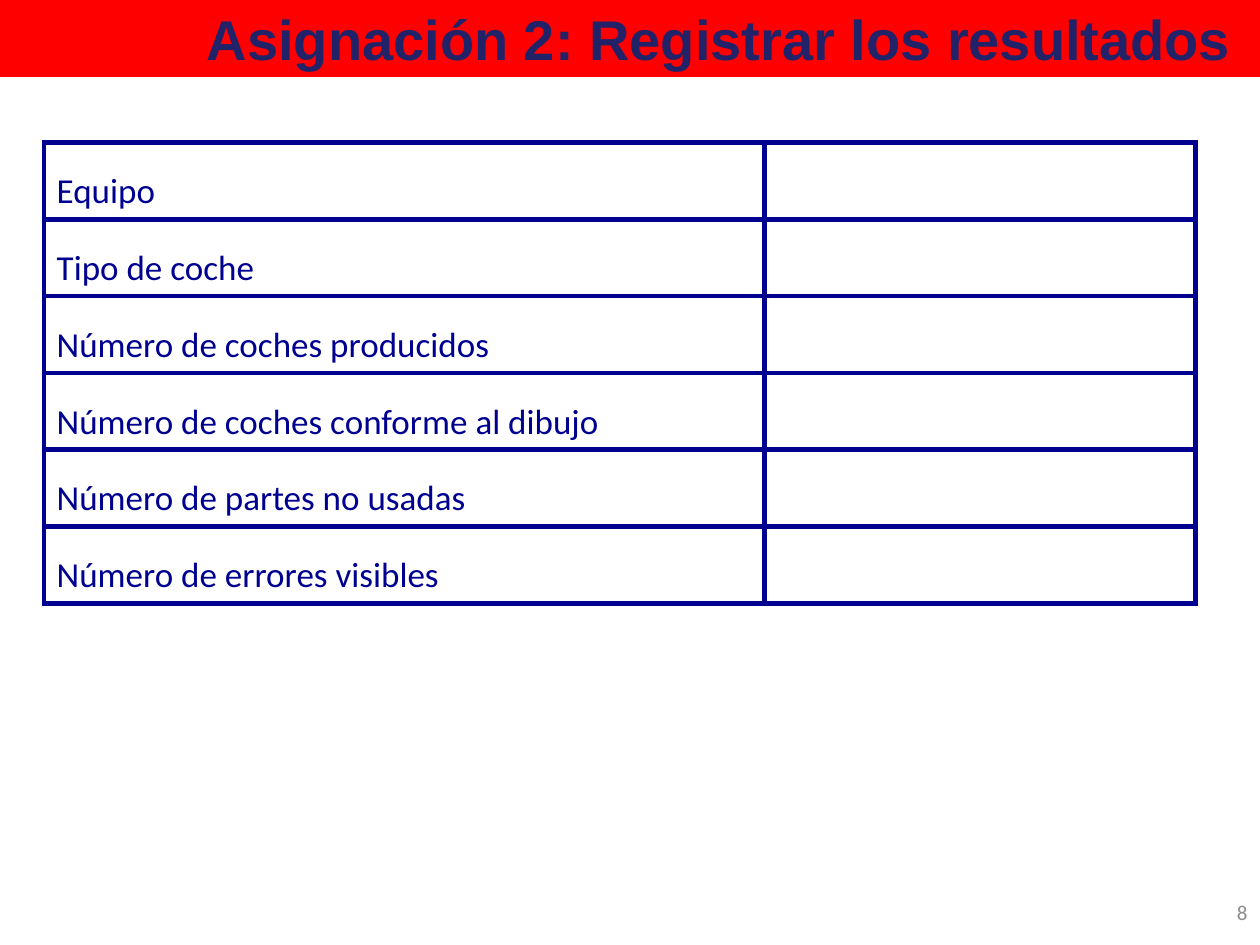
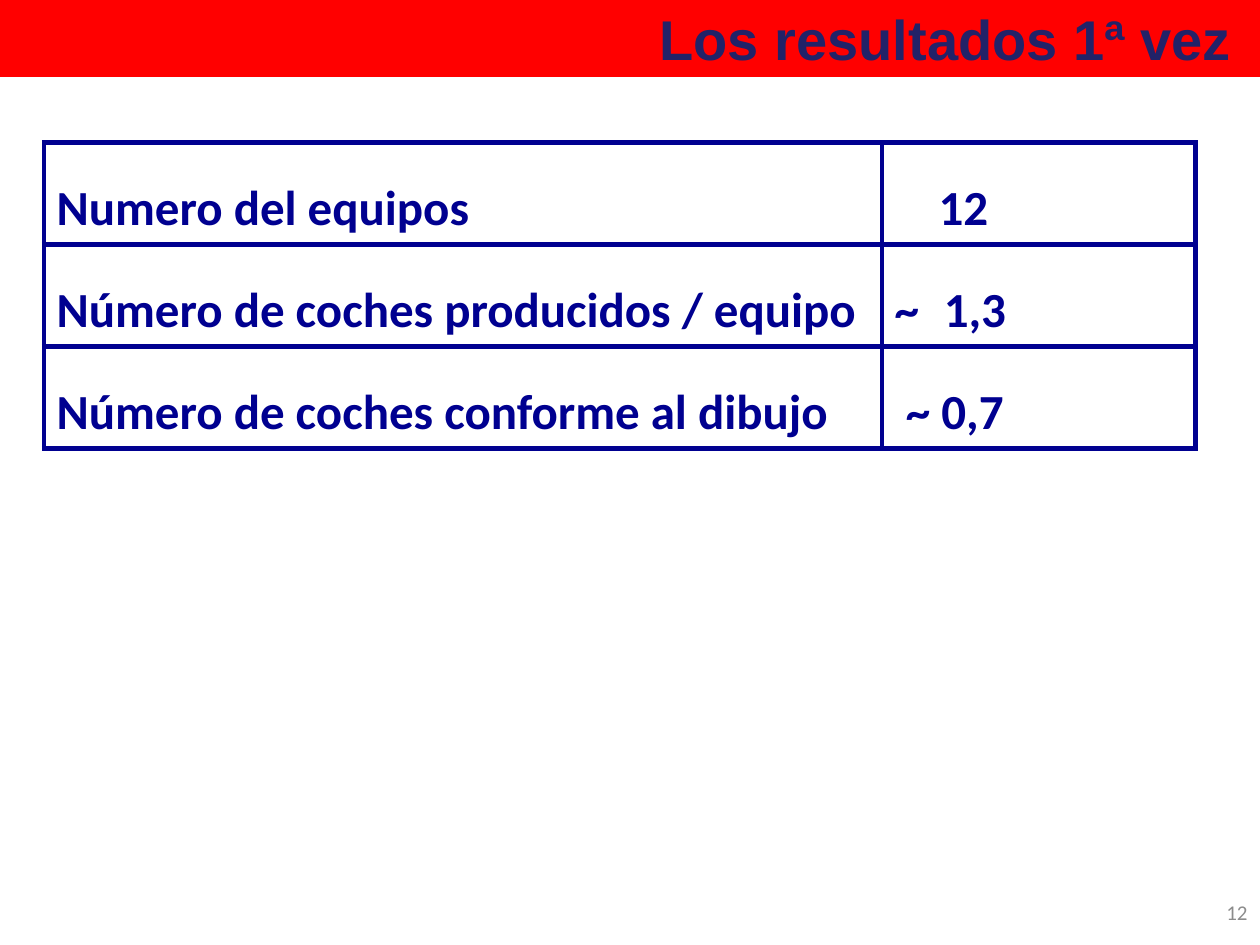
"""Build two results slides, each with a title band, a bordered table and a page number."""
from lxml import etree
from pptx import Presentation
from pptx.dml.color import RGBColor
from pptx.enum.shapes import MSO_SHAPE
from pptx.enum.text import MSO_ANCHOR, PP_ALIGN
from pptx.oxml.ns import qn
from pptx.util import Inches, Pt

RECTANGLE = MSO_SHAPE.RECTANGLE
MIDDLE = MSO_ANCHOR.MIDDLE
RIGHT = PP_ALIGN.RIGHT

RED = RGBColor(0xFF, 0x00, 0x00)
INDIGO = RGBColor(0x22, 0x22, 0x68)
NAVY = RGBColor(0x00, 0x00, 0x90)
GRAY = RGBColor(0x8C, 0x8C, 0x8C)

TITLE_FONT = "Arial"
BODY_FONT = "Calibri"
BORDER = Pt(3)
VALUE_TAB = Inches(0.39)

RECORD_ROWS = [
    ("Equipo", "", 0),
    ("Tipo de coche", "", 0),
    ("Número de coches producidos", "", 0),
    ("Número de coches conforme al dibujo", "", 0),
    ("Número de partes no usadas", "", 0),
    ("Número de errores visibles", "", 0),
]
RESULT_ROWS = [
    ("Numero del equipos", "12", 0.35),
    ("Número de coches producidos / equipo", "~\t1,3", 0),
    ("Número de coches conforme al dibujo", "~ 0,7", 0.09),
]


class Deck:
    def __init__(self):
        self.prs = Presentation()
        self.prs.slide_width = Inches(10)
        self.prs.slide_height = Inches(7.5)
        self.s = None

    def add_slide(self, title, number):
        self.s = self.prs.slides.add_slide(self.prs.slide_layouts[6])
        self.title_band(title)
        self.page_number(number)

    def styled_text(self, tf, text, font, size, color, bold=False):
        p = tf.paragraphs[0]
        p.text = text
        for r in p.runs:
            r.font.name = font
            r.font.size = Pt(size)
            r.font.bold = bold
            r.font.color.rgb = color
        return p

    def title_band(self, text):
        sp = self.s.shapes.add_shape(RECTANGLE, 0, 0, self.prs.slide_width, Inches(0.61))
        sp.shadow.inherit = False
        sp.fill.solid()
        sp.fill.fore_color.rgb = RED
        sp.line.fill.background()
        sp.text_frame.vertical_anchor = MIDDLE
        p = self.styled_text(sp.text_frame, text, TITLE_FONT, 32, INDIGO, bold=True)
        p.alignment = RIGHT

    def page_number(self, number):
        sp = self.s.shapes.add_textbox(Inches(7.67), Inches(6.98), Inches(2.33), Inches(0.52))
        tf = sp.text_frame
        tf.word_wrap = True
        tf.vertical_anchor = MIDDLE
        self.styled_text(tf, str(number), BODY_FONT, 12, GRAY).alignment = RIGHT

    def table(self, rows, widths, row_height, size, bold=False):
        frame = self.s.shapes.add_table(
            len(rows), len(widths), Inches(0.35), Inches(1.13),
            Inches(sum(widths)), Inches(row_height * len(rows)))
        table = frame.table
        table.first_row = table.horz_banding = False
        for column, width in zip(table.columns, widths):
            column.width = Inches(width)
        for i, (label, value, indent) in enumerate(rows):
            self.cell(table.cell(i, 0), label, size, bold)
            self.cell(table.cell(i, 1), value, size, bold, indent)

    def cell(self, cell, text, size, bold, indent=0):
        cell.vertical_anchor = MIDDLE
        cell.fill.background()
        self.borders(cell)
        if not text:
            return
        p = self.styled_text(cell.text_frame, text, BODY_FONT, size, NAVY, bold)
        p.line_spacing = 1.5
        p.space_before = p.space_after = Pt(6)
        props = p._p.get_or_add_pPr()
        props.set("marL", str(Inches(indent)))
        if "\t" in text:
            tabs = etree.SubElement(props, qn("a:tabLst"))
            etree.SubElement(tabs, qn("a:tab"), pos=str(VALUE_TAB), algn="l")

    def borders(self, cell):
        props = cell._tc.get_or_add_tcPr()
        for i, side in enumerate(("lnL", "lnR", "lnT", "lnB")):
            line = etree.Element(qn(f"a:{side}"), w=str(BORDER))
            fill = etree.SubElement(line, qn("a:solidFill"))
            etree.SubElement(fill, qn("a:srgbClr"), val=str(NAVY))
            props.insert(i, line)


def main():
    deck = Deck()
    deck.add_slide("Asignación 2: Registrar los resultados ", 8)
    deck.table(RECORD_ROWS, (5.72, 3.42), 0.61, 20)
    deck.add_slide("Los resultados 1ª vez ", 12)
    deck.table(RESULT_ROWS, (6.65, 2.49), 0.81, 28, bold=True)
    deck.prs.save("out.pptx")


if __name__ == "__main__":
    main()
